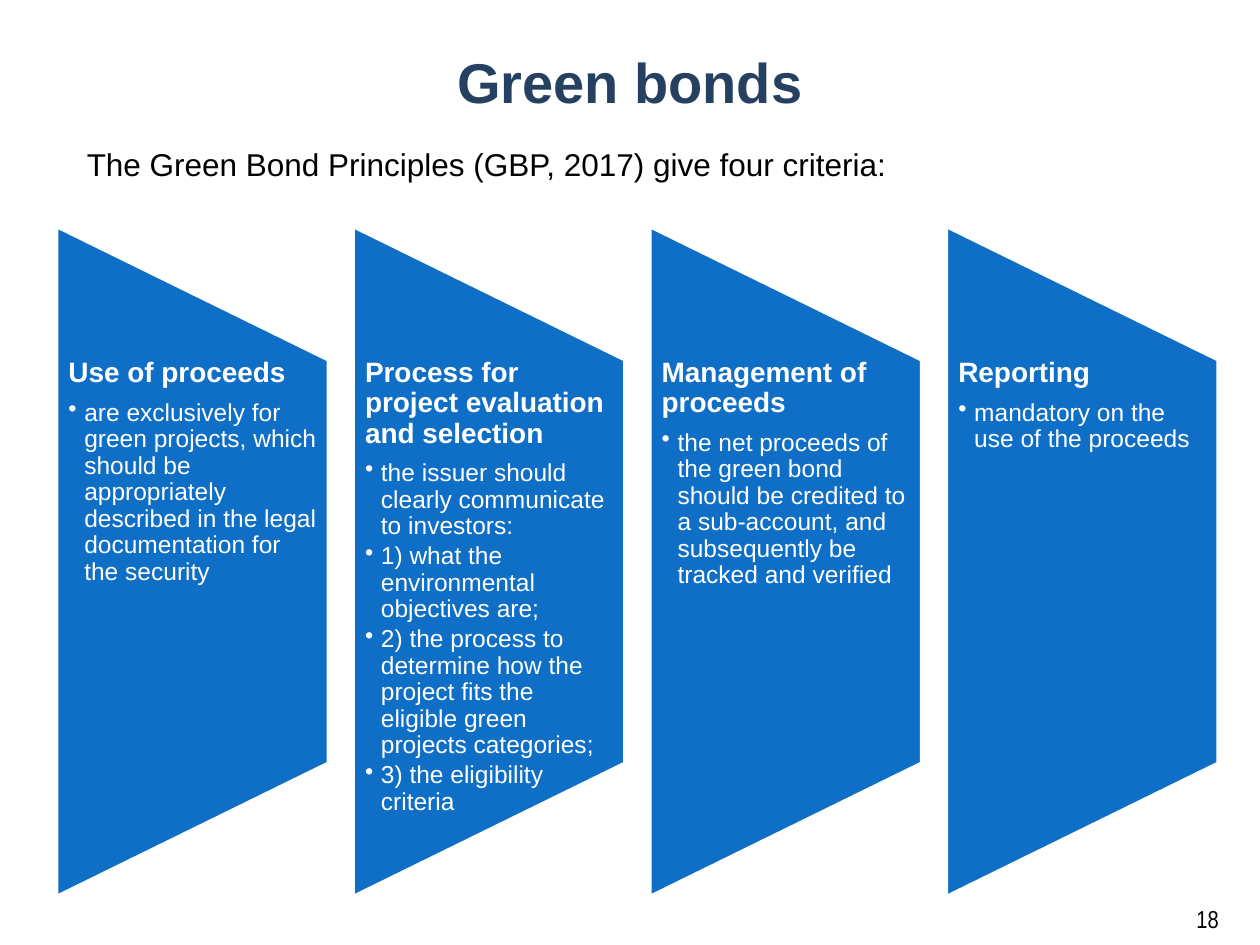
from lxml import etree
from pptx import Presentation
from pptx.dml.color import RGBColor
from pptx.enum import shapes, text
from pptx.oxml.ns import qn
from pptx.util import Cm, Pt

WHITE = RGBColor(0xFF, 0xFF, 0xFF)
BLACK = RGBColor(0, 0, 0)
NAVY = RGBColor(0x25, 0x40, 0x61)
BLUE = RGBColor(0x0F, 0x6F, 0xC6)
ALIGN = text.PP_ALIGN
ANCHOR = text.MSO_ANCHOR

CARDS = [
    ("Use of proceeds", [
        "are exclusively for green projects, which should be appropriately "
        "described in the legal documentation for the security"]),
    ("Process for project evaluation and selection", [
        "the issuer should clearly communicate to investors:",
        "1) what the environmental objectives are;",
        "2) the process to determine how the project fits the eligible "
        "green projects categories;",
        "3) the eligibility criteria"]),
    ("Management of proceeds", [
        "the net proceeds of the green bond should be credited to a "
        "sub-account, and subsequently be tracked and verified"]),
    ("Reporting", ["mandatory on the use of the proceeds"]),
]


def add_frame(slide, box, anchor=ANCHOR.TOP, pad=(0.25, 0.13)):
    """Add an empty wrapping text box; box and pad are in cm."""
    frame = slide.shapes.add_textbox(*map(Cm, box)).text_frame
    frame.word_wrap = True
    frame.vertical_anchor = anchor
    frame.margin_left = frame.margin_right = Cm(pad[0])
    frame.margin_top = frame.margin_bottom = Cm(pad[1])
    return frame


def write(frame, words, size=14, color=BLACK, font="Arial", bold=False,
          align=ALIGN.LEFT, line=None, after=0, bullet=False):
    """Write one paragraph into the frame."""
    para = frame.paragraphs[0]
    if para.runs:
        para = frame.add_paragraph()
    if bullet:
        para.level = 1
        props = para._p.get_or_add_pPr()
        props.set("marL", str(Cm(0.32)))
        props.set("indent", str(-Cm(0.32)))
        etree.SubElement(props, qn("a:buChar")).set("char", "•")
    para.alignment = align
    para.space_before = Pt(0)
    para.space_after = Pt(after)
    if line:
        para.line_spacing = line
    run = para.add_run()
    run.text = words
    run.font.name = font
    run.font.size = Pt(size)
    run.font.bold = bold
    run.font.color.rgb = color


def add_head(slide, left, top, width):
    # Title and lead sentence
    title = add_frame(slide, (left, top, width, 1.8), ANCHOR.MIDDLE)
    write(title, "Green bonds", size=32, color=NAVY, bold=True,
          align=ALIGN.CENTER)
    lead = add_frame(slide, (left + 0.8, top + 1.98, width - 1.6, 1.42),
                     pad=(0.25, 0.2))
    write(lead, "The Green Bond Principles (GBP, 2017) give four criteria:",
          size=18, align=ALIGN.JUSTIFY)


def add_card(slide, left, top, width, height, head, points):
    # Trapezoid, turned a quarter so that its long side is on the left
    shift = (height - width) / 2
    back = slide.shapes.add_shape(
        shapes.MSO_SHAPE.FLOWCHART_MANUAL_OPERATION,
        Cm(left - shift), Cm(top + shift), Cm(height), Cm(width))
    back.rotation = 270
    back.shadow.inherit = False
    back.fill.solid()
    back.fill.fore_color.rgb = BLUE
    back.line.color.rgb = WHITE
    back.line.width = Pt(4.33)
    # Heading and points, in the middle three fifths
    frame = add_frame(slide, (left, top + height / 5, width, height * 0.6),
                      pad=(0.28, 0))
    write(frame, head, size=16, color=WHITE, bold=True, line=0.9, after=6.4)
    for point in points:
        write(frame, point, color=WHITE, line=0.9, after=2.1, bullet=True)


def add_cards(slide, left, top, width, height, gap):
    for i, (head, points) in enumerate(CARDS):
        add_card(slide, left + i * (width + gap), top, width, height,
                 head, points)


def add_number(slide, left, top, width, height):
    frame = add_frame(slide, (left, top, width, height), ANCHOR.BOTTOM)
    write(frame, "18", font="Arial Narrow", align=ALIGN.RIGHT)


def main():
    deck = Presentation()
    deck.slide_width, deck.slide_height = Cm(25.4), Cm(19.05)
    slide = deck.slides.add_slide(deck.slide_layouts[6])
    add_number(slide, 18.9, 17.93, 5.92, 1.02)
    add_head(slide, 0.7, 0.74, 24)
    add_cards(slide, 1.1, 4.5, 5.56, 13.64, gap=0.42)
    deck.save("out.pptx")


if __name__ == "__main__":
    main()
